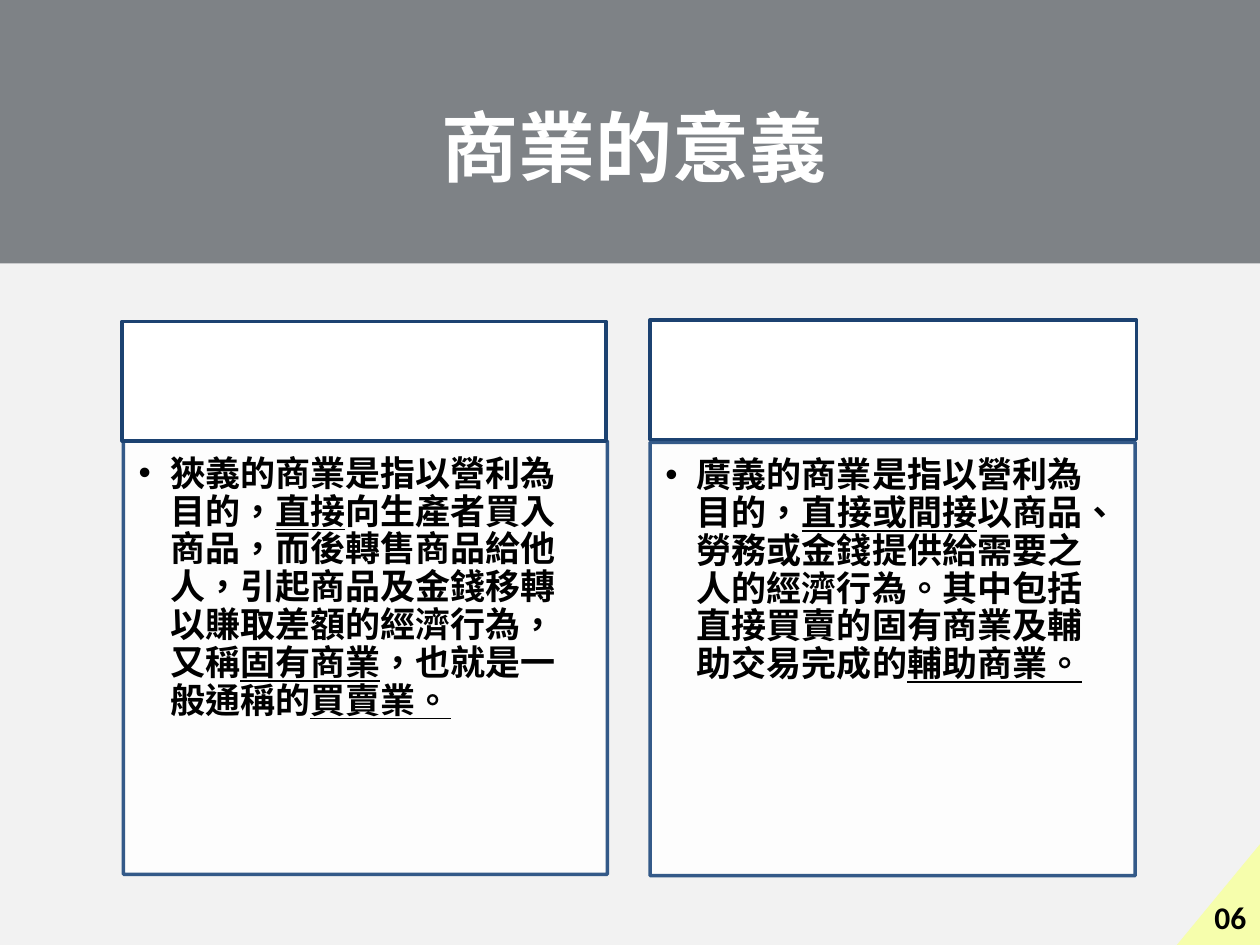
from pptx import Presentation
from pptx.dml.color import RGBColor
from pptx.enum import shapes, text
from pptx.oxml.ns import qn
from pptx.util import Inches, Pt
from lxml import etree

# Content: the marked pieces are underlined
TITLE = "商業的意義"
NUMBER = "06"
COLUMNS = [
    {"head": (0.97, 2.55, 3.84, 0.95), "body": (0.98, 3.5, 3.84, 3.44),
     "text": [("狹義的商業是指以營利為目的，", False), ("直接", True),
              ("向生產者買入商品，而後轉售商品給他人，引起商品及金錢移轉以賺取差額的經濟行為，又稱", False),
              ("固有商業", True), ("，也就是一般通稱的", False), ("買賣業。", True)]},
    {"head": (5.16, 2.54, 3.86, 0.95), "body": (5.16, 3.51, 3.85, 3.44),
     "text": [("廣義的商業是指以營利為目的，", False), ("直接或間接", True),
              ("以商品、勞務或金錢提供給需要之人的經濟行為。其中包括直接買賣的固有商業及輔助交易完成的", False),
              ("輔助商業。", True)]},
]
BAND = (0, -0.08, 10, 2.17)
TITLE_BOX = (0.03, 0.37, 10, 1.08)
CORNER = (9.34, 6.7, 0.66, 0.8)
NUMBER_BOX = (9.54, 7.08, 0.46, 0.4)

THEME = {
    "page": "F2F2F2", "band": "0C141C", "panel": "FFFFFF", "corner": "F6FEAC",
    "head_line": "1C4271", "body_line": "1F497D", "line": 2,
    "ink": "000000", "light": "FFFFFF",
    "cjk": "Noto Sans CJK SC", "latin": "Calibri",
    "title": 44, "body": 20, "number": 18,
}


def colour(name):
    return RGBColor.from_string(THEME[name])


def set_all(target, values):
    for name, value in values.items():
        setattr(target, name, value)


def place(shape, area):
    set_all(shape, dict(zip(("left", "top", "width", "height"), map(Inches, area))))


def paint(shape, fill, line=None, opacity=100):
    shape.fill.solid()
    shape.fill.fore_color.rgb = colour(fill)
    if line:
        shape.line.color.rgb = colour(line)
        shape.line.width = Pt(THEME["line"])
    else:
        shape.line.fill.background()
    if opacity < 100:
        for tint in shape._element.spPr.iter(qn("a:srgbClr")):
            etree.SubElement(tint, qn("a:alpha"), val=str(opacity * 1000))


def add_panel(page, kind, area, **look):
    panel = page.shapes.add_shape(kind, *map(Inches, area))
    panel.shadow.inherit = False
    paint(panel, **look)
    return panel


def set_frame(box, insets=(0.1, 0.05, 0.1, 0.05)):
    frame = box.text_frame
    sides = ("margin_left", "margin_top", "margin_right", "margin_bottom")
    set_all(frame, dict(zip(sides, map(Inches, insets))))
    set_all(frame, {"word_wrap": True, "auto_size": text.MSO_AUTO_SIZE.NONE,
                    "vertical_anchor": text.MSO_ANCHOR.TOP})
    return frame.paragraphs[0]


def add_span(para, words, size, ink="ink", face="cjk", underline=False):
    span = para.add_run()
    span.text = words
    set_all(span.font, {"size": Pt(THEME[size]), "bold": True, "name": THEME[face],
                        "underline": underline})
    span.font.color.rgb = colour(ink)
    if face == "cjk":
        props = span._r.get_or_add_rPr()
        props.set("lang", "zh-TW")
        latin = props.find(qn("a:latin"))
        latin.addnext(etree.Element(qn("a:ea"), typeface=THEME[face]))


def set_bullet(para):
    props = para._p.get_or_add_pPr()
    props.set("marL", str(Inches(0.25)))
    props.set("indent", str(-Inches(0.25)))
    etree.SubElement(props, qn("a:buChar"), char="•")


def main():
    deck = Presentation()
    deck.slide_width, deck.slide_height = Inches(10), Inches(7.5)
    page = deck.slides.add_slide(deck.slide_layouts.get_by_name("Two Content"))
    page.background.fill.solid()
    page.background.fill.fore_color.rgb = colour("page")
    title, *bodies = page.placeholders
    rectangle = shapes.MSO_SHAPE.RECTANGLE

    # Title on its band, which goes to the back
    band = add_panel(page, rectangle, BAND, fill="band", opacity=50)
    title._element.addprevious(band._element)
    place(title, TITLE_BOX)
    para = set_frame(title)
    set_all(para, {"alignment": text.PP_ALIGN.CENTER, "line_spacing": 1.5})
    add_span(para, TITLE, "title", ink="light")

    # Two columns: empty heading above a bulleted panel
    for column, body in zip(COLUMNS, bodies):
        add_panel(page, rectangle, column["head"], fill="panel", line="head_line")
        place(body, column["body"])
        paint(body, "panel", "body_line", opacity=90)
        para = set_frame(body, (0.12, 0.12, 0.16, 0.17))
        set_all(para, {"level": 1, "line_spacing": 0.9,
                       "space_before": Pt(0), "space_after": Pt(3)})
        set_bullet(para)
        for words, underline in column["text"]:
            add_span(para, words, "body", underline=underline)

    # Page number in the corner
    corner = add_panel(page, shapes.MSO_SHAPE.RIGHT_TRIANGLE, CORNER, fill="corner")
    corner.rotation = 180
    corner._element.spPr.find(qn("a:xfrm")).set("flipV", "1")
    number = page.shapes.add_textbox(*map(Inches, NUMBER_BOX))
    add_span(set_frame(number), NUMBER, "number", face="latin")

    deck.save("out.pptx")


if __name__ == "__main__":
    main()
